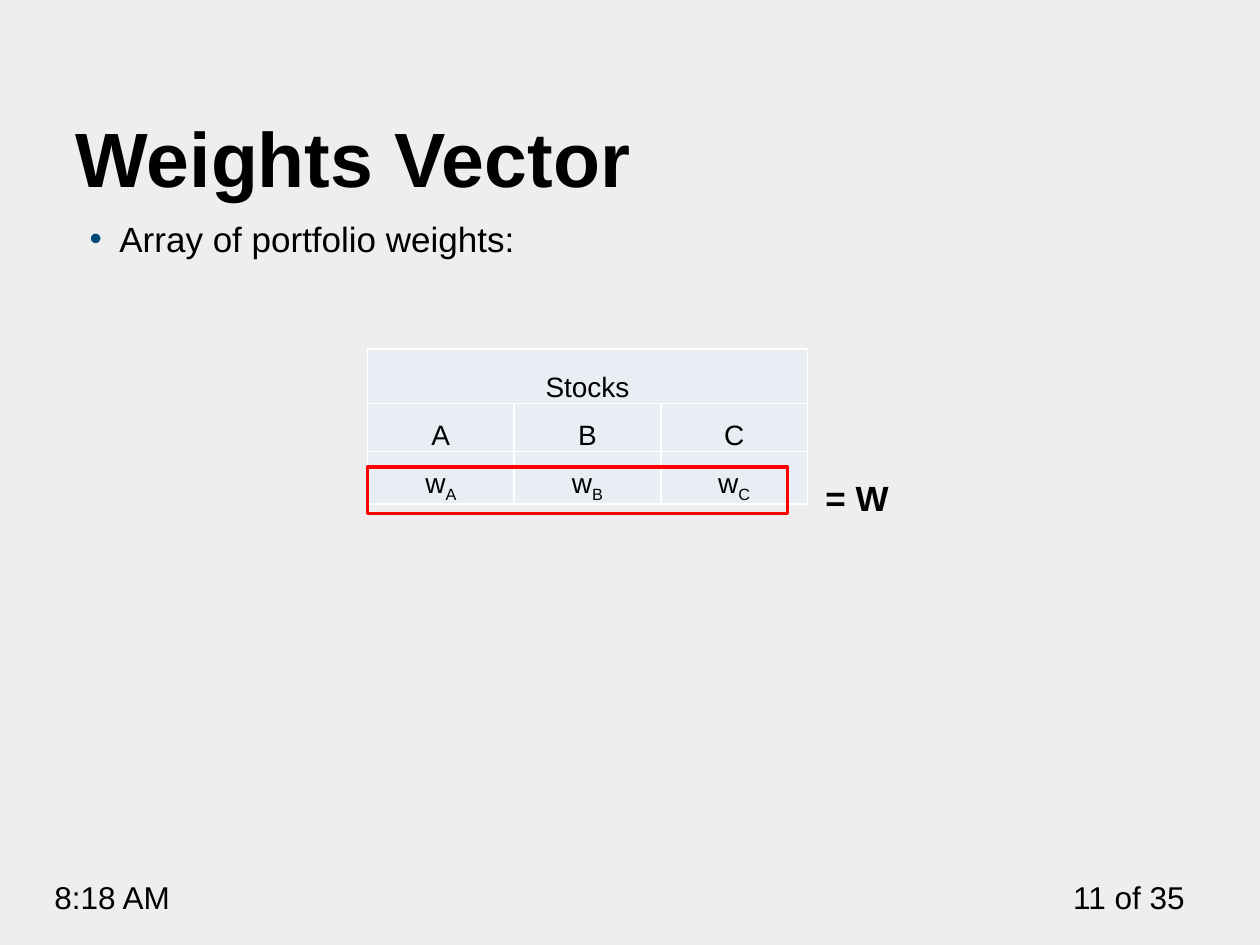
from lxml.etree import SubElement
from pptx import Presentation
from pptx.dml.color import RGBColor
from pptx.enum.shapes import MSO_SHAPE
from pptx.enum.text import MSO_ANCHOR, MSO_AUTO_SIZE, PP_ALIGN
from pptx.oxml.ns import qn
from pptx.util import Pt

BLACK = RGBColor(0x00, 0x00, 0x00)
WHITE = RGBColor(0xFF, 0xFF, 0xFF)
GREY = RGBColor(0xEE, 0xEE, 0xEE)
PALE = RGBColor(0xE9, 0xED, 0xF4)
NAVY = RGBColor(0x00, 0x4A, 0x78)
RED = RGBColor(0xFF, 0x00, 0x00)


def write(para, text, size=20, bold=False, align=PP_ALIGN.LEFT, sub=""):
    para.alignment = align
    para.space_before = Pt(0)
    for part in filter(None, (text, sub)):
        run = para.add_run()
        run.text = part
        run.font.name = "Arial"
        run.font.size = Pt(size)
        run.font.bold = bold
        run.font.color.rgb = BLACK
        if part is sub:
            run.font._element.set("baseline", "-25000")


def border(cell):
    props = cell._tc.get_or_add_tcPr()
    for spot, side in enumerate(("lnL", "lnR", "lnT", "lnB")):
        line = SubElement(props, qn(f"a:{side}"), w=str(Pt(1)))
        fill = SubElement(line, qn("a:solidFill"))
        SubElement(fill, qn("a:srgbClr"), val=str(WHITE))
        props.insert(spot, line)


deck = Presentation()
deck.slide_width, deck.slide_height = Pt(720), Pt(540)
slide = deck.slides.add_slide(deck.slide_layouts[1])
slide.background.fill.solid()
slide.background.fill.fore_color.rgb = GREY

for text, left, width, align in (
    ("11 of 35", 600, 84, PP_ALIGN.RIGHT),
    ("8:18 AM", 24, 114, PP_ALIGN.LEFT),
):
    box = slide.shapes.add_textbox(Pt(left), Pt(498), Pt(width), Pt(29))
    box.text_frame.word_wrap = True
    write(box.text_frame.paragraphs[0], text, size=18, align=align)

rows = [
    [("Stocks", "")],
    [(name, "") for name in "ABC"],
    [("w", name) for name in "ABC"],
]
grid = slide.shapes.add_table(3, 3, Pt(210), Pt(199.5), Pt(251.4), Pt(88.5)).table
grid.first_row = grid.horz_banding = False
for row, height in zip(grid.rows, (31, 27.5, 30)):
    row.height = Pt(height)
for col in grid.columns:
    col.width = Pt(83.8)
for cell in grid.iter_cells():
    cell.fill.solid()
    cell.fill.fore_color.rgb = PALE
    cell.vertical_anchor = MSO_ANCHOR.BOTTOM
    cell.margin_left = cell.margin_right = cell.margin_top = Pt(0.75)
    cell.margin_bottom = Pt(0)
    border(cell)
grid.cell(0, 0).merge(grid.cell(0, 2))
for y, row in enumerate(rows):
    for x, (text, sub) in enumerate(row):
        para = grid.cell(y, x).text_frame.paragraphs[0]
        write(para, text, size=16, align=PP_ALIGN.CENTER, sub=sub)

title = slide.shapes.title
title.left, title.top, title.width, title.height = Pt(36), Pt(28), Pt(648), Pt(90)
frame = title.text_frame
frame.auto_size = MSO_AUTO_SIZE.NONE
frame.vertical_anchor = MSO_ANCHOR.BOTTOM
frame.margin_bottom = Pt(2)
write(frame.paragraphs[0], "Weights Vector", size=44, bold=True)

body = slide.placeholders[1]
body.left, body.top, body.width, body.height = Pt(44), Pt(118), Pt(633), Pt(320)
frame = body.text_frame
frame.auto_size = MSO_AUTO_SIZE.NONE
frame.margin_top = Pt(6)
item = frame.paragraphs[0]
props = item._p.get_or_add_pPr()
props.set("marL", str(Pt(17)))
props.set("indent", str(Pt(-17)))
tint = SubElement(props, qn("a:buClr"))
SubElement(tint, qn("a:srgbClr"), val=str(NAVY))
SubElement(props, qn("a:buFont"), typeface="Arial")
SubElement(props, qn("a:buChar"), char="•")
write(item, "Array of portfolio weights:")

label = frame.add_paragraph()
props = label._p.get_or_add_pPr()
props.set("marL", str(Pt(420.5)))
props.set("indent", "0")
SubElement(props, qn("a:buNone"))
write(label, "= W", bold=True)
label.space_before = Pt(124.5)

frame = slide.shapes.add_shape(MSO_SHAPE.RECTANGLE, Pt(210), Pt(267), Pt(240), Pt(26.5))
frame.shadow.inherit = False
frame.fill.background()
frame.line.color.rgb = RED
frame.line.width = Pt(2)

deck.save("out.pptx")
